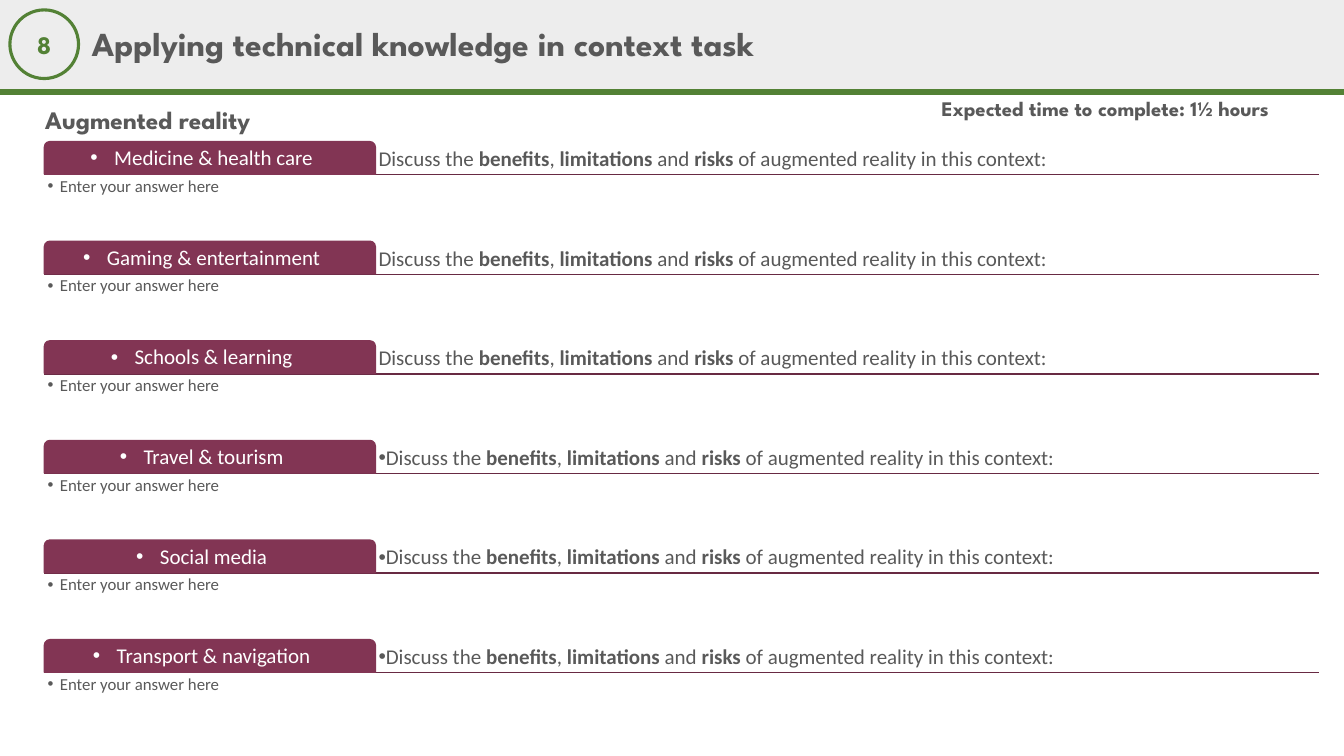
from pptx import Presentation
from pptx.dml.color import RGBColor
from pptx.enum.shapes import MSO_CONNECTOR, MSO_SHAPE
from pptx.enum.text import MSO_ANCHOR, PP_ALIGN
from pptx.oxml.ns import qn
from pptx.util import Cm, Pt
from lxml.etree import SubElement

GREY_BAND = RGBColor(0xED, 0xED, 0xED)
GREEN = RGBColor(0x53, 0x81, 0x35)
GREY_TEXT = RGBColor(0x59, 0x59, 0x59)
PLUM = RGBColor(0x82, 0x35, 0x54)
DARK_PLUM = RGBColor(0x68, 0x2A, 0x43)
WHITE = RGBColor(0xFF, 0xFF, 0xFF)
HEADING_FONT = "League Spartan"
BODY_FONT = "Calibri"

SLIDE_WIDTH, SLIDE_HEIGHT = 33.87, 19.05
CONTEXT_LEFT, CONTEXT_TOP, CONTEXT_WIDTH = 1.12, 3.57, 32.13
CONTEXT_STEP = 2.51
TAB_WIDTH, TAB_HEIGHT = 8.34, 0.82

# Each context, and whether its prompt carries a bullet
CONTEXTS = [
    ("Medicine & health care", False),
    ("Gaming & entertainment", False),
    ("Schools & learning", False),
    ("Travel & tourism", True),
    ("Social media", True),
    ("Transport & navigation", True),
]
# Runs of the prompt, with bold on or off
PROMPT = [
    ("Discuss the ", False),
    ("benefits", True),
    (", ", False),
    ("limitations", True),
    (" and ", False),
    ("risks", True),
    (" of augmented reality in this context:", False),
]


def add_line(slide, left, top, width, color, weight):
    line = slide.shapes.add_connector(
        MSO_CONNECTOR.STRAIGHT, Cm(left), Cm(top), Cm(left + width), Cm(top))
    line.line.color.rgb = color
    line.line.width = Pt(weight)
    SubElement(line._element.spPr, qn("a:effectLst"))


def add_filled_shape(slide, kind, left, top, width, height, fill, outline=None, weight=1):
    shape = slide.shapes.add_shape(kind, Cm(left), Cm(top), Cm(width), Cm(height))
    shape.shadow.inherit = False
    if fill is None:
        shape.fill.background()
    else:
        shape.fill.solid()
        shape.fill.fore_color.rgb = fill
    if outline is None:
        shape.line.fill.background()
    else:
        shape.line.color.rgb = outline
        shape.line.width = Pt(weight)
    return shape


def add_text_box(slide, left, top, width, height, anchor, inset=None):
    """Return the first paragraph of a new wrapping text box."""
    box = slide.shapes.add_textbox(Cm(left), Cm(top), Cm(width), Cm(height))
    frame = box.text_frame
    frame.word_wrap = True
    frame.vertical_anchor = anchor
    if inset is not None:
        frame.margin_left = frame.margin_right = Cm(inset)
        frame.margin_top = frame.margin_bottom = Cm(inset)
    paragraph = frame.paragraphs[0]
    paragraph.line_spacing = 0.9
    return paragraph


def add_bullet(paragraph, margin=0, hanging=0):
    properties = paragraph._p.get_or_add_pPr()
    properties.set("marL", str(Cm(margin)))
    properties.set("indent", str(-Cm(hanging)))
    SubElement(properties, qn("a:buFont"), typeface="Arial")
    SubElement(properties, qn("a:buChar"), char="•")


def format_font(paragraph, name, size, color, bold=False):
    font = paragraph.font
    font.name, font.size, font.bold = name, Pt(size), bold
    font.color.rgb = color


def add_header(slide, left, top, width, height):
    add_filled_shape(slide, MSO_SHAPE.RECTANGLE, left, top, width, height, GREY_BAND)
    add_line(slide, left, top + height, width, GREEN, 4.5)

    badge = add_filled_shape(slide, MSO_SHAPE.OVAL, left + 0.25, top + 0.25,
                             1.73, 1.73, None, GREEN, 2.25)
    badge.text_frame.vertical_anchor = MSO_ANCHOR.MIDDLE
    number = badge.text_frame.paragraphs[0]
    number.text = "8"
    number.alignment = PP_ALIGN.CENTER
    format_font(number, HEADING_FONT, 18, GREEN, True)

    title = slide.shapes.title
    title.left, title.top = Cm(left + 2.06), Cm(top + 0.23)
    title.width, title.height = Cm(26.19), Cm(1.85)
    title.text_frame.vertical_anchor = MSO_ANCHOR.MIDDLE
    paragraph = title.text_frame.paragraphs[0]
    paragraph.text = "Applying technical knowledge in context task"
    paragraph.alignment = PP_ALIGN.LEFT
    paragraph.line_spacing = 0.9
    format_font(paragraph, HEADING_FONT, 24, GREY_TEXT, True)
    # Bring the title in front of the grey band
    slide.shapes._spTree.append(title._element)


def add_subheading(slide, left, top, width, height):
    topic = add_text_box(slide, left, top + 0.18, 14.5, height, MSO_ANCHOR.MIDDLE)
    topic.text = "Augmented reality"
    format_font(topic, HEADING_FONT, 18, GREY_TEXT, True)

    time_width = 10.39
    time = add_text_box(slide, left + width - time_width, top, time_width, height,
                        MSO_ANCHOR.TOP)
    time.text = "Expected time to complete: 1½ hours"
    format_font(time, HEADING_FONT, 14.8, GREY_TEXT, True)


def add_context(slide, left, top, width, name, bulleted_prompt):
    """Place a labelled tab, its prompt, the rule below and the answer area."""
    rule_top = top + 0.83
    add_line(slide, left, rule_top, width, DARK_PLUM, 1)

    prompt = add_text_box(slide, left + TAB_WIDTH, top, width - TAB_WIDTH, TAB_HEIGHT,
                          MSO_ANCHOR.BOTTOM, 0.08)
    if bulleted_prompt:
        add_bullet(prompt)
    format_font(prompt, BODY_FONT, 15, GREY_TEXT)
    for text, bold in PROMPT:
        run = prompt.add_run()
        run.text = text
        run.font.bold = bold

    add_filled_shape(slide, MSO_SHAPE.ROUND_2_SAME_RECTANGLE, left, top,
                     TAB_WIDTH, TAB_HEIGHT, PLUM, PLUM)
    label = add_text_box(slide, left + 0.03, top + 0.04, TAB_WIDTH - 0.06, 0.79,
                         MSO_ANCHOR.MIDDLE, 0.08)
    label.text = name
    label.alignment = PP_ALIGN.CENTER
    add_bullet(label, 0.18, 0.6)
    format_font(label, BODY_FONT, 15, WHITE)

    answer = add_text_box(slide, left, rule_top, width, 1.65, MSO_ANCHOR.TOP, 0.08)
    answer.text = "Enter your answer here"
    answer.level = 1
    add_bullet(answer, 0.31, 0.31)
    format_font(answer, BODY_FONT, 12, GREY_TEXT)


def main():
    presentation = Presentation()
    presentation.slide_width = Cm(SLIDE_WIDTH)
    presentation.slide_height = Cm(SLIDE_HEIGHT)
    slide = presentation.slides.add_slide(presentation.slide_layouts[5])

    add_header(slide, 0, 0, SLIDE_WIDTH, 2.31)
    add_subheading(slide, 0.89, 2.36, SLIDE_WIDTH - 0.89, 1.02)
    for index, (name, bulleted_prompt) in enumerate(CONTEXTS):
        add_context(slide, CONTEXT_LEFT, CONTEXT_TOP + index * CONTEXT_STEP,
                    CONTEXT_WIDTH, name, bulleted_prompt)
    presentation.save("out.pptx")


if __name__ == "__main__":
    main()
